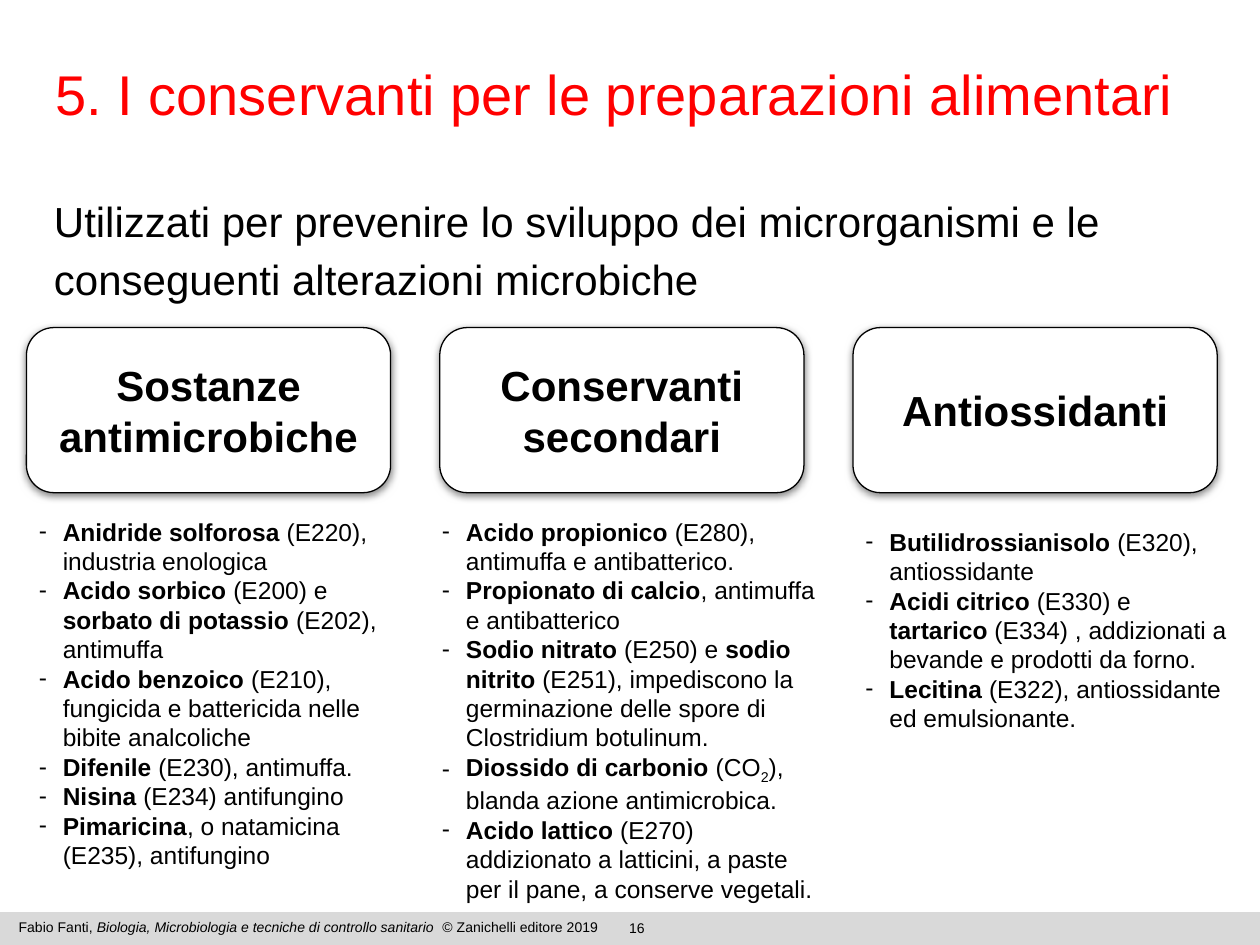
from dataclasses import dataclass
from functools import partial

from lxml.etree import SubElement
from pptx import Presentation
from pptx.dml.color import RGBColor as RGB
from pptx.enum.shapes import MSO_SHAPE as Preset
from pptx.enum.text import MSO_ANCHOR as Anchor, PP_ALIGN as Align
from pptx.oxml.ns import qn
from pptx.util import Inches, Pt


@dataclass(frozen=True)
class Theme:
    font: str = "Arial"
    paper: str = "FFFFFF"
    ink: str = "000000"
    accent: str = "FF0000"
    band: str = "D9D9D9"
    title: int = 32
    lead: int = 24
    body: int = 14
    small: int = 8
    hairline: float = 0.75


@dataclass(frozen=True)
class Box:
    left: float
    top: float
    width: float
    height: float

    def place(self):
        across, down = Inches(10) / 100, Inches(7.5) / 100
        return (round(self.left * across), round(self.top * down),
                round(self.width * across), round(self.height * down))


@dataclass(frozen=True)
class Span:
    text: str
    bold: bool = False
    italic: bool = False
    baseline: int = 0


THEME = Theme()
strong = partial(Span, bold=True)
PAGE = Box(0, 0, 100, 100)

ANTIMICROBIALS = [
    [strong("Anidride solforosa"), Span(" (E220), industria enologica")],
    [strong("Acido sorbico"), Span(" (E200) e "),
     strong("sorbato di potassio"), Span(" (E202), antimuffa")],
    [strong("Acido benzoico"),
     Span(" (E210), fungicida e battericida nelle bibite analcoliche")],
    [strong("Difenile"), Span(" (E230), antimuffa.")],
    [strong("Nisina"), Span(" (E234) antifungino")],
    [strong("Pimaricina"), Span(", o natamicina (E235), antifungino")],
]
SECONDARY = [
    [strong("Acido propionico "), Span("(E280), antimuffa e antibatterico.")],
    [strong("Propionato di calcio"), Span(", antimuffa e antibatterico")],
    [strong("Sodio nitrato"), Span(" (E250) e "), strong("sodio nitrito"),
     Span(" (E251), impediscono la germinazione delle spore di Clostridium botulinum.")],
    [strong("Diossido di carbonio"), Span(" (CO"), Span("2", baseline=-25000),
     Span("), blanda azione antimicrobica.")],
    [strong("Acido lattico"),
     Span(" (E270) addizionato a latticini, a paste per il pane, a conserve vegetali.")],
]
ANTIOXIDANTS = [
    [strong("Butilidrossianisolo"), Span(" (E320), antiossidante")],
    [strong("Acidi citrico"), Span(" (E330) e "), strong("tartarico"),
     Span(" (E334) , addizionati a bevande e prodotti da forno.")],
    [strong("Lecitina"), Span(" (E322), antiossidante ed emulsionante.")],
]
GROUPS = [
    ("Sostanze antimicrobiche", ANTIMICROBIALS, Box(2.1, 53.33, 32, 39.87)),
    ("Conservanti secondari", SECONDARY, Box(34.1, 53.33, 32, 41.6)),
    ("Antiossidanti", ANTIOXIDANTS, Box(67.7, 54.4, 30.9, 25.33)),
]


def panel(slide, box, preset, fill, outline=None):
    surface = slide.shapes.add_shape(preset, *box.place())
    surface.shadow.inherit = False
    surface.fill.solid()
    surface.fill.fore_color.rgb = RGB.from_string(fill)
    if outline:
        surface.line.color.rgb = RGB.from_string(outline)
        surface.line.width = Pt(THEME.hairline)
    else:
        surface.line.fill.background()
    return surface


def add_bullet(paragraph):
    properties = paragraph._p.get_or_add_pPr()
    properties.set("marL", str(Inches(0.19)))
    properties.set("indent", str(Inches(-0.28)))
    tint = SubElement(properties, qn("a:buClr"))
    SubElement(tint, qn("a:srgbClr"), val=THEME.ink)
    SubElement(properties, qn("a:buFont"), typeface=THEME.font)
    SubElement(properties, qn("a:buChar"), char="-")


def write(holder, lines, size, color=THEME.ink, align=Align.LEFT, anchor=Anchor.TOP,
          inset=(0.1, 0.1), spacing=None, bulleted=False):
    frame = holder.text_frame
    frame.word_wrap = True
    frame.vertical_anchor = anchor
    frame.margin_left = frame.margin_right = Inches(inset[0])
    frame.margin_top = frame.margin_bottom = Inches(inset[1])
    for index, spans in enumerate(lines):
        paragraph = frame.add_paragraph() if index else frame.paragraphs[0]
        paragraph.alignment = align
        if spacing:
            paragraph.line_spacing = spacing
        if bulleted:
            add_bullet(paragraph)
        for span in spans:
            run = paragraph.add_run()
            run.text = span.text
            run.font.name = THEME.font
            run.font.size = Pt(size)
            run.font.bold = span.bold
            run.font.italic = span.italic
            run.font.color.rgb = RGB.from_string(color)
            if span.baseline:
                run.font._element.set("baseline", str(span.baseline))


def cast_shadow(card):
    effects = card._element.spPr.find(qn("a:effectLst"))
    shadow = SubElement(effects, qn("a:outerShdw"), blurRad=str(Pt(4.5)),
                        dist=str(Pt(1.5)), dir="5400000", algn="bl", rotWithShape="0")
    shade = SubElement(shadow, qn("a:srgbClr"), val=THEME.ink)
    SubElement(shade, qn("a:alpha"), val="50000")


def footer(slide, box):
    panel(slide, box, Preset.RECTANGLE, THEME.band)
    number = slide.shapes.add_textbox(*Box(39.4, box.top + 0.14, 22.3, 2.27).place())
    write(number, [[Span("16")]], THEME.small, align=Align.CENTER, inset=(0.1, 0.05))
    credit = slide.shapes.add_textbox(*Box(box.left + 0.5, box.top, 50.4, 3.2).place())
    write(credit, [[Span("Fabio Fanti, "),
                    Span("Biologia, Microbiologia e tecniche di controllo sanitario", italic=True),
                    Span("  © Zanichelli editore 2019")]],
          THEME.small, inset=(0.1, 0.05))


def lead(slide, box):
    statement = panel(slide, box, Preset.RECTANGLE, THEME.paper, THEME.paper)
    write(statement, [[Span("Utilizzati per prevenire lo sviluppo dei microrganismi "
                            "e le conseguenti alterazioni microbiche")]],
          THEME.lead, spacing=1.15)


def heading(slide, box):
    title = panel(slide, box, Preset.RECTANGLE, THEME.paper, THEME.paper)
    write(title, [[Span("5. I conservanti per le preparazioni alimentari")]],
          THEME.title, THEME.accent, inset=(0.09, 0.05))


def category(slide, box, name):
    card = panel(slide, box, Preset.ROUNDED_RECTANGLE, THEME.paper, THEME.ink)
    cast_shadow(card)
    write(card, [[strong(name)]], THEME.lead, align=Align.CENTER, anchor=Anchor.MIDDLE)


def additives(slide, box, entries):
    write(slide.shapes.add_textbox(*box.place()), entries, THEME.body, bulleted=True)


def main():
    deck = Presentation()
    deck.slide_width, deck.slide_height = Inches(10), Inches(7.5)
    slide = deck.slides.add_slide(deck.slide_layouts[6])
    footer(slide, Box(PAGE.left, 96.53, PAGE.width, 3.47))
    lead(slide, Box(3.3, 18.53, 95.3, 12.93))
    heading(slide, Box(3.5, 5.6, 96.5, 12.93))
    for column, (name, entries, list_box) in enumerate(GROUPS):
        category(slide, Box(2.1 + 32.8 * column, 34.67, 28.9, 17.47), name)
        additives(slide, list_box, entries)
    deck.save("out.pptx")


if __name__ == "__main__":
    main()
